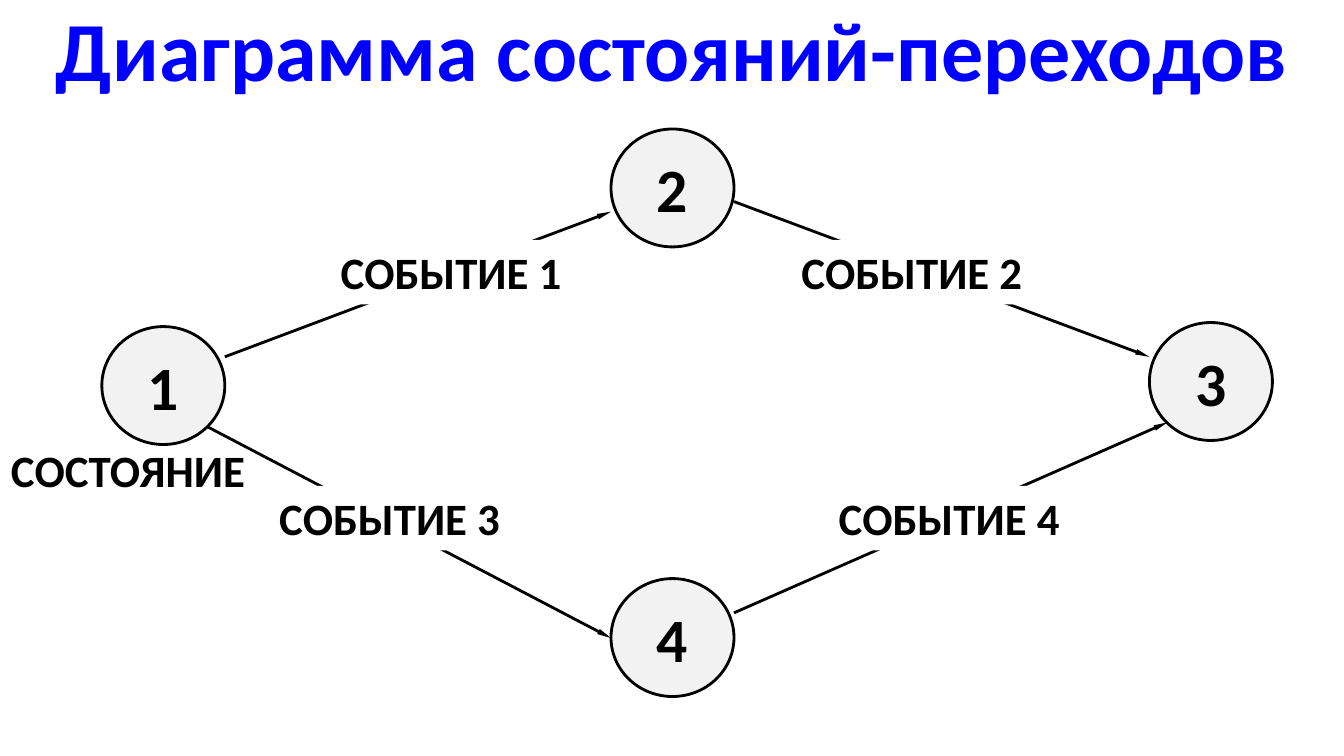
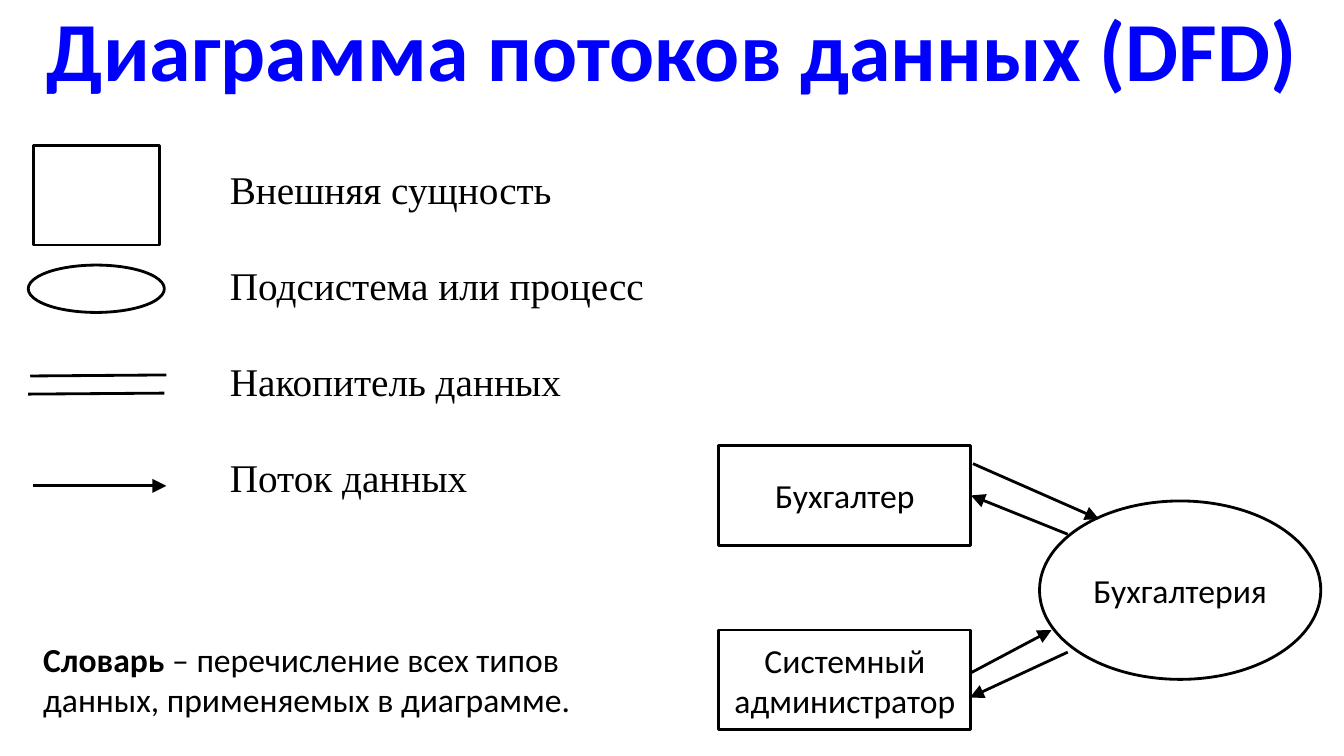
from lxml import etree
from pptx import Presentation
from pptx import util as u
from pptx.dml.color import RGBColor
from pptx.enum import shapes, text
from pptx.oxml.ns import qn

PX = 9144
WIDTH, HEIGHT = 1333, 750
BLUE = RGBColor(0x00, 0x00, 0xFF)
BLACK = RGBColor(0x00, 0x00, 0x00)
WHITE = RGBColor(0xFF, 0xFF, 0xFF)
GREY = RGBColor(0xF2, 0xF2, 0xF2)
SANS, SERIF = "Calibri", "Times New Roman"
RECTANGLE, OVAL = shapes.MSO_SHAPE.RECTANGLE, shapes.MSO_SHAPE.OVAL
CENTER, LEFT = text.PP_ALIGN.CENTER, text.PP_ALIGN.LEFT
TOP, MIDDLE, BOTTOM = text.MSO_ANCHOR.TOP, text.MSO_ANCHOR.MIDDLE, text.MSO_ANCHOR.BOTTOM
LAYOUT_CONTENT, LAYOUT_TITLE = 1, 5

STATES_TITLE = "Диаграмма состояний-переходов"
STATE_SIZE = (122, 117)
STATES = [("2", 606, 128), ("4", 606, 574), ("3", 1140, 320), ("1", 101, 324)]
TRANSITIONS = [
    ((223, 354), (606, 210)),
    ((205, 423), (606, 633)),
    ((728, 200), (1140, 354)),
    ((728, 608), (1158, 419)),
]
STATE_LABEL = ("СОСТОЯНИЕ", (1, 434, 255, 64))
EVENT_SIZE = (241, 64)
EVENTS = [
    ("СОБЫТИЕ 1", 328, 238),
    ("СОБЫТИЕ 2", 785, 238),
    ("СОБЫТИЕ 3", 267, 482),
    ("СОБЫТИЕ 4", 822, 482),
]

FLOWS_TITLE = "Диаграмма потоков данных (DFD)"
LEGEND = ["Внешняя сущность", "Подсистема или процесс", "Накопитель данных", "Поток данных"]
LEGEND_BOX = (218, 159, 480, 340)
LEGEND_SHAPES = [(RECTANGLE, (33, 144, 125, 99)), (OVAL, (28, 263, 135, 47))]
STORE_LINES = [((30, 373), (165, 372)), ((28, 391), (163, 390))]
FLOW_SAMPLE = ((33, 482), (165, 482))
ACCOUNTANT = "Бухгалтер"
PARTICIPANTS = [
    (ACCOUNTANT, RECTANGLE, (713, 442, 250, 99)),
    ("Системный администратор", RECTANGLE, (713, 625, 250, 99)),
    ("Бухгалтерия", OVAL, (1031, 497, 279, 177)),
]
FLOWS = [
    ((965, 460), (1090, 515)),
    ((962, 668), (1043, 625)),
    ((1059, 647), (962, 692)),
]
ACCOUNTANT_FLOW = ((1059, 530), (963, 492))
GLOSSARY = [("Словарь", True), (" – перечисление всех типов данных, применяемых в диаграмме.", False)]
GLOSSARY_BOX = (33, 629, 621, 91)


def emu(lengths):
    return [u.Emu(length * PX) for length in lengths]


def place(shape, box):
    shape.left, shape.top, shape.width, shape.height = emu(box)


def write(shape, paragraphs, size, font=SANS, color=BLACK, bold=False, align=LEFT,
          anchor=TOP, wrap=True, line_spacing=1.0, gap=0, plain_list=False):
    frame = shape.text_frame
    frame.word_wrap = wrap
    frame.auto_size = text.MSO_AUTO_SIZE.NONE
    frame.vertical_anchor = anchor
    for index, runs in enumerate(paragraphs):
        paragraph = frame.add_paragraph() if index else frame.paragraphs[0]
        paragraph.alignment = align
        paragraph.line_spacing = line_spacing
        paragraph.space_before = u.Pt(gap if index else 0)
        if plain_list:
            properties = paragraph._p.get_or_add_pPr()
            properties.set("marL", "0")
            properties.set("indent", "0")
            etree.SubElement(properties, qn("a:buNone"))
        for content, run_bold in [(runs, bold)] if isinstance(runs, str) else runs:
            run = paragraph.add_run()
            run.text = content
            run.font.size, run.font.name = u.Pt(size), font
            run.font.bold = run_bold
            run.font.color.rgb = color


def add_slide(presentation, layout, title):
    slide = presentation.slides.add_slide(presentation.slide_layouts[layout])
    place(slide.shapes.title, (0, 0, WIDTH, 104))
    write(slide.shapes.title, [title], size=60, color=BLUE, bold=True, align=CENTER,
          anchor=BOTTOM, line_spacing=0.9)
    return slide


def add_outline(slide, kind, box, fill=WHITE):
    shape = slide.shapes.add_shape(kind, *emu(box))
    shape.shadow.inherit = False
    shape.fill.solid()
    shape.fill.fore_color.rgb = fill
    shape.line.color.rgb = BLACK
    shape.line.width = u.Pt(2)
    return shape


def add_label(slide, box, paragraphs, fill=None, **style):
    label = slide.shapes.add_textbox(*emu(box))
    if fill is not None:
        label.fill.solid()
        label.fill.fore_color.rgb = fill
    write(label, paragraphs, **style)


def add_line(slide, start, end, head_width=None):
    line = slide.shapes.add_connector(shapes.MSO_CONNECTOR.STRAIGHT, *emu(start + end))
    line.line.color.rgb = BLACK
    line.line.width = u.Pt(2)
    if head_width:
        etree.SubElement(line.line._get_or_add_ln(), qn("a:tailEnd"),
                         type="triangle", w=head_width, len="lg")
    etree.SubElement(line._element.spPr, qn("a:effectLst"))
    return line


def build_states(presentation):
    slide = add_slide(presentation, LAYOUT_TITLE, STATES_TITLE)
    for name, left, top in STATES:
        state = add_outline(slide, OVAL, (left, top) + STATE_SIZE, GREY)
        write(state, [name], size=44, bold=True, align=CENTER, anchor=MIDDLE)
    for start, end in TRANSITIONS:
        add_line(slide, start, end, "sm")
    label_style = dict(size=32, bold=True, wrap=False)
    name, box = STATE_LABEL
    add_label(slide, box, [name], **label_style)
    for name, left, top in EVENTS:
        add_label(slide, (left, top) + EVENT_SIZE, [name], WHITE, **label_style)


def build_flows(presentation):
    slide = add_slide(presentation, LAYOUT_CONTENT, FLOWS_TITLE)
    legend = slide.placeholders[1]
    place(legend, LEGEND_BOX)
    write(legend, LEGEND, size=28, font=SERIF, gap=35, plain_list=True)
    for kind, box in LEGEND_SHAPES:
        add_outline(slide, kind, box)
    for start, end in STORE_LINES:
        add_line(slide, start, end)
    participants = {}
    for name, kind, box in PARTICIPANTS:
        participants[name] = add_outline(slide, kind, box)
        write(participants[name], [name], size=24, align=CENTER, anchor=MIDDLE)
    for start, end in [FLOW_SAMPLE] + FLOWS:
        add_line(slide, start, end, "lg")
    add_line(slide, *ACCOUNTANT_FLOW, "lg").end_connect(participants[ACCOUNTANT], 3)
    add_label(slide, GLOSSARY_BOX, [GLOSSARY], size=24)


def main():
    presentation = Presentation()
    presentation.slide_width, presentation.slide_height = emu((WIDTH, HEIGHT))
    build_states(presentation)
    build_flows(presentation)
    presentation.save("out.pptx")


if __name__ == "__main__":
    main()
